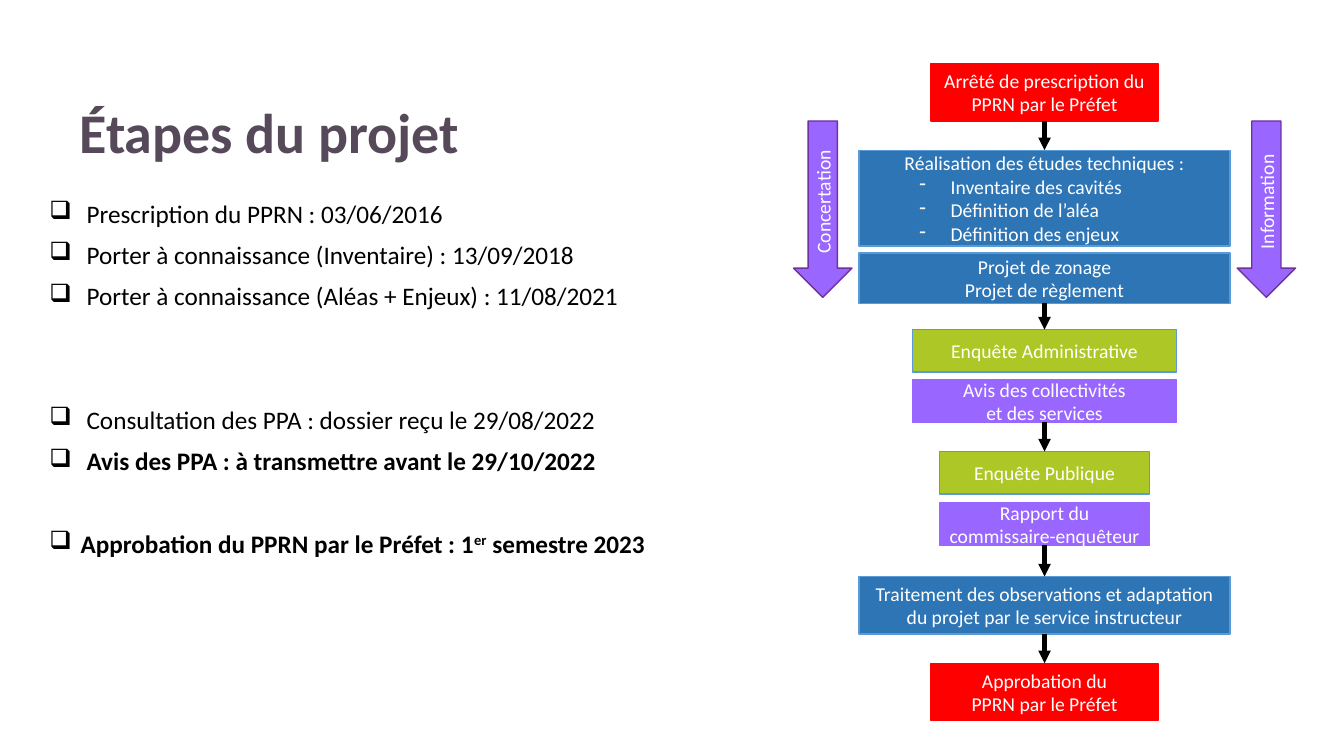
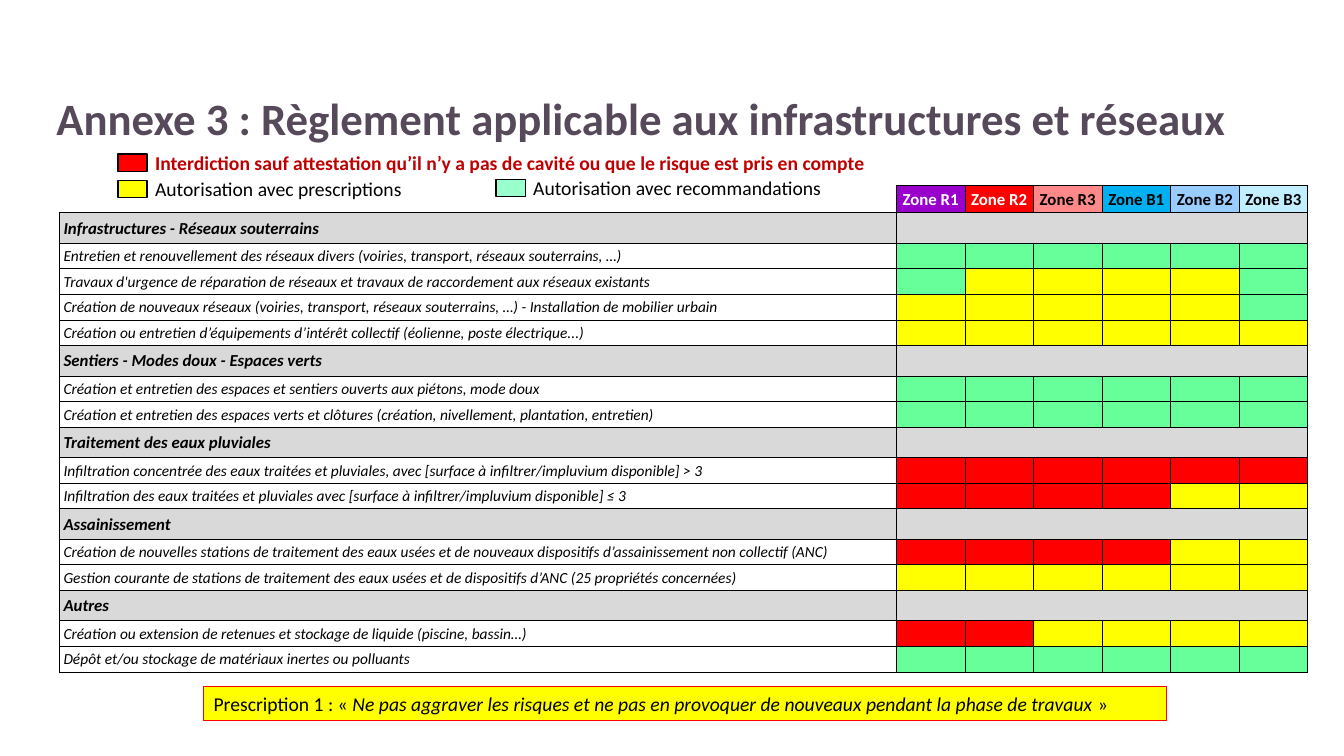
"""Build two slides on a risk-prevention plan: project steps and network rules."""
from dataclasses import dataclass
from typing import Any, NamedTuple, Optional

from lxml import etree
from pptx import Presentation
from pptx import util as u
from pptx.dml import color
from pptx.enum import shapes, text
from pptx.oxml import ns

ALIGN = text.PP_ALIGN
SHAPE = shapes.MSO_SHAPE


@dataclass(frozen=True)
class Theme:
    """Colours, font and type sizes shared by the slides."""
    font: str = "Calibri"
    title: str = "56495A"
    black: str = "000000"
    white: str = "FFFFFF"
    red: str = "FF0000"
    dark_red: str = "C00000"
    blue: str = "2E75B6"
    blue_line: str = "5B9BD5"
    lime: str = "ADC826"
    violet: str = "9966FF"
    violet_line: str = "7030A0"
    yellow: str = "FFFF00"
    mint: str = "99FFCC"
    green: str = "66FF99"
    grey: str = "D9D9D9"
    title_size: int = 40
    long_title_size: int = 32
    list_size: int = 18
    label_size: int = 14
    head_size: int = 12
    cell_size: int = 11


T = Theme()
NO_STYLE_TABLE = "{2D5ABB26-0587-4C30-8999-92F81FD0307C}"


class Run(NamedTuple):
    """A stretch of text with one style."""
    text: str
    bold: bool = False
    italic: bool = False
    superscript: bool = False


class Step(NamedTuple):
    """A bulleted project step."""
    runs: list[Run]
    before: float = 10
    indent: float = 0.37


class Box(NamedTuple):
    """A flowchart box centred on the chart axis."""
    top: float
    width: float
    height: float
    fill: str
    line: str
    lines: list[str]
    bullets: tuple[str, ...] = ()
    arrow_to_next: bool = False
    inset: float = 0.1


class SideArrow(NamedTuple):
    """A block arrow beside the flowchart."""
    left: float
    label: str


class Legend(NamedTuple):
    """A colour swatch and its meaning."""
    left: float
    top: float
    width: float
    fill: str
    ink: str
    label: Run


class Zone(NamedTuple):
    """A zone column heading."""
    name: str
    fill: str
    ink: str


class Rule(NamedTuple):
    """A table row; a row without levels is a section heading."""
    label: str
    levels: str = ""


STEPS = [
    Step([Run("Prescription du PPRN : 03/06/2016")], 0),
    Step([Run("Porter à connaissance (Inventaire) : 13/09/2018")]),
    Step([Run("Porter à connaissance (Aléas + Enjeux) : 11/08/2021")]),
    Step([Run("Consultation des PPA : dossier reçu le 29/08/2022")], 69),
    Step([Run("Avis des PPA : à transmettre avant le 29/10/2022", True)]),
    Step([Run("Approbation du PPRN par le Préfet : 1", True), Run("er", True, superscript=True),
          Run(" semestre 2023", True)], 39.5, 0.31),
]
AXIS = 10.36
BOXES = [
    Box(0.63, 2.25, 0.57, T.red, T.red, ["Arrêté de prescription du", "PPRN par le Préfet"],
        arrow_to_next=True),
    Box(1.49, 3.68, 0.95, T.blue, T.blue_line, ["Réalisation des études techniques :"],
        ("Inventaire des cavités", "Définition de l’aléa", "Définition des enjeux")),
    Box(2.51, 3.68, 0.5, T.blue, T.blue_line, ["Projet de zonage", "Projet de règlement"],
        arrow_to_next=True),
    Box(3.27, 2.62, 0.42, T.lime, T.blue_line, ["Enquête Administrative"]),
    Box(3.77, 2.62, 0.42, T.violet, T.violet, ["Avis des collectivités", "et des services"],
        arrow_to_next=True),
    Box(4.48, 2.08, 0.42, T.lime, T.blue_line, ["Enquête Publique"]),
    Box(4.99, 2.08, 0.42, T.violet, T.violet, ["Rapport du commissaire-enquêteur"],
        arrow_to_next=True, inset=0.05),
    Box(5.72, 3.68, 0.57, T.blue, T.blue_line,
        ["Traitement des observations et adaptation du projet par le service instructeur"],
        arrow_to_next=True),
    Box(6.58, 2.25, 0.57, T.red, T.red, ["Approbation du", "PPRN par le Préfet"]),
]
SIDE_ARROWS = [SideArrow(7.87, "Concertation"), SideArrow(12.27, "Information")]
LEGENDS = [
    Legend(1.17, 1.53, 7.35, T.red, T.dark_red, Run(
        "Interdiction sauf attestation qu’il n’y a pas de cavité ou que le risque est pris en compte",
        True)),
    Legend(1.17, 1.79, 3.07, T.yellow, T.black, Run("Autorisation avec prescriptions")),
    Legend(4.92, 1.78, 3.57, T.mint, T.black, Run("Autorisation avec recommandations")),
]
ZONES = [
    Zone("Zone R1", "9900CC", T.white), Zone("Zone R2", T.red, T.white),
    Zone("Zone R3", "FF8989", T.black), Zone("Zone B1", "00B0F0", T.black),
    Zone("Zone B2", "99CCFF", T.black), Zone("Zone B3", "C1EFFF", T.black),
]
LEVELS = {"G": T.green, "Y": T.yellow, "R": T.red}
RULES = [
    Rule("Infrastructures - Réseaux souterrains"),
    Rule("Entretien et renouvellement des réseaux divers (voiries, transport, réseaux souterrains, …)",
         "GGGGGG"),
    Rule("Travaux d'urgence de réparation de réseaux et travaux de raccordement aux réseaux existants",
         "GYYYYG"),
    Rule("Création de nouveaux réseaux (voiries, transport, réseaux souterrains, …)"
         " - Installation de mobilier urbain", "YYYYYG"),
    Rule("Création ou entretien d’équipements d’intérêt collectif (éolienne, poste électrique...)",
         "YYYYYY"),
    Rule("Sentiers - Modes doux - Espaces verts"),
    Rule("Création et entretien des espaces et sentiers ouverts aux piétons, mode doux", "GGGGGG"),
    Rule("Création et entretien des espaces verts et clôtures"
         " (création, nivellement, plantation, entretien)", "GGGGGG"),
    Rule("Traitement des eaux pluviales"),
    Rule("Infiltration concentrée des eaux traitées et pluviales, avec"
         " [surface à infiltrer/impluvium disponible] > 3", "RRRRRR"),
    Rule("Infiltration des eaux traitées et pluviales avec"
         " [surface à infiltrer/impluvium disponible] ≤ 3", "RRRRYY"),
    Rule("Assainissement"),
    Rule("Création de nouvelles stations de traitement des eaux usées et de nouveaux dispositifs"
         " d’assainissement non collectif (ANC)", "RRRRYY"),
    Rule("Gestion courante de stations de traitement des eaux usées et de dispositifs d’ANC"
         " (25 propriétés concernées)", "YYYYYY"),
    Rule("Autres"),
    Rule("Création ou extension de retenues et stockage de liquide (piscine, bassin…)", "RRYYYY"),
    Rule("Dépôt et/ou stockage de matériaux inertes ou polluants", "GGGGGG"),
]


def rgb(value: str) -> color.RGBColor:
    """Turn a hex string into a colour."""
    return color.RGBColor.from_string(value)


def sub(parent: Any, tag: str, **attrs: str) -> Any:
    """Append a DrawingML element."""
    return etree.SubElement(parent, ns.qn(tag), attrs)


def write(p: Any, runs: list[Run], size: float, ink: str, align: ALIGN = ALIGN.LEFT) -> None:
    """Add styled runs to a paragraph."""
    p.alignment = align
    for run in runs:
        r = p.add_run()
        r.text = run.text
        f = r.font
        f.name, f.size, f.bold, f.italic = T.font, u.Pt(size), run.bold, run.italic
        f.color.rgb = rgb(ink)
        if run.superscript:
            r._r.get_or_add_rPr().set("baseline", "30000")


def next_paragraph(tf: Any) -> Any:
    """Return the empty first paragraph, or a new one."""
    return tf.add_paragraph() if tf.paragraphs[0].runs else tf.paragraphs[0]


def bullet(p: Any, char: str, left: float, hang: float) -> None:
    """Give a paragraph a hanging bullet."""
    pPr = p._p.get_or_add_pPr()
    pPr.set("marL", str(u.Inches(left)))
    pPr.set("indent", str(-u.Inches(hang)))
    sub(pPr, "a:buChar", char=char)


def add_titled_slide(prs: Any, title: str, left: float, top: float, size: float) -> Any:
    """Add a title-only slide and format its title."""
    s = prs.slides.add_slide(prs.slide_layouts[5])
    sp = s.shapes.title
    sp.left, sp.top, sp.width, sp.height = map(u.Inches, (left, top, 11.95, 0.9))
    tf = sp.text_frame
    tf.auto_size, tf.vertical_anchor = text.MSO_AUTO_SIZE.NONE, text.MSO_ANCHOR.MIDDLE
    write(tf.paragraphs[0], [Run(title, True)], size, T.title, ALIGN.JUSTIFY)
    return s


def add_textbox(s: Any, left: float, top: float, width: float, height: float) -> Any:
    """Add a wrapping text box and return its frame."""
    tf = s.shapes.add_textbox(*map(u.Inches, (left, top, width, height))).text_frame
    tf.word_wrap = True
    return tf


def add_shape(s: Any, kind: SHAPE, at: tuple[float, ...], fill: str, line: str,
              weight: float = 1) -> Any:
    """Add a flat filled shape."""
    sp = s.shapes.add_shape(kind, *map(u.Inches, at))
    sp.shadow.inherit = False
    sp.fill.solid()
    sp.fill.fore_color.rgb = rgb(fill)
    sp.line.color.rgb = rgb(line)
    sp.line.width = u.Pt(weight)
    sp.text_frame.word_wrap = True
    return sp


def add_arrow(s: Any, start: Any, end: Any) -> None:
    """Join the bottom of one box to the top of another."""
    c = s.shapes.add_connector(shapes.MSO_CONNECTOR.STRAIGHT, 0, 0, 0, 0)
    c.begin_connect(start, 2)
    c.end_connect(end, 0)
    c.line.color.rgb = rgb(T.black)
    c.line.width = u.Pt(3)
    sub(c.line._get_or_add_ln(), "a:tailEnd", type="triangle")
    sub(c._element.spPr, "a:effectLst")


def add_box(s: Any, box: Box) -> Any:
    """Draw a flowchart box with its text."""
    at = (AXIS - box.width / 2, box.top, box.width, box.height)
    sp = add_shape(s, SHAPE.RECTANGLE, at, box.fill, box.line)
    tf = sp.text_frame
    tf.margin_left = tf.margin_right = u.Inches(box.inset)
    for line in box.lines:
        write(next_paragraph(tf), [Run(line)], T.label_size, T.white, ALIGN.CENTER)
    for item in box.bullets:
        p = next_paragraph(tf)
        p.level = 1
        bullet(p, "-", 0.81, 0.31)
        write(p, [Run(item)], T.label_size, T.white)
    return sp


def format_cell(cell: Any, fill: Optional[str], sides: str) -> None:
    """Set a cell's margins, fill and black borders on the given sides."""
    cell.margin_left = cell.margin_right = cell.margin_top = u.Inches(0.01)
    cell.margin_bottom = 0
    cell.vertical_anchor = text.MSO_ANCHOR.MIDDLE
    if fill:
        cell.fill.solid()
        cell.fill.fore_color.rgb = rgb(fill)
    else:
        cell.fill.background()
    tcPr = cell._tc.get_or_add_tcPr()
    for i, side in enumerate("LRTB"):
        ln = sub(tcPr, f"a:ln{side}", w=str(u.Pt(0.5)))
        if side in sides:
            sub(sub(ln, "a:solidFill"), "a:srgbClr", val=T.black)
        else:
            sub(ln, "a:noFill")
        tcPr.insert(i, ln)
    sub(cell.text_frame.paragraphs[0]._p, "a:endParaRPr", sz=str(T.cell_size * 100))


def add_rules_table(s: Any) -> None:
    """Draw the table of rules by zone."""
    height, head, section = 4.83, 0.27, 0.3
    sections = sum(not rule.levels for rule in RULES)
    item = (height - head - sections * section) / (len(RULES) - sections)
    table = s.shapes.add_table(len(RULES) + 1, len(ZONES) + 1,
                               *map(u.Inches, (0.59, 1.84, 12.39, height))).table
    table.first_row = table.horz_banding = False
    table._tbl.tblPr.find(ns.qn("a:tableStyleId")).text = NO_STYLE_TABLE
    for i, col in enumerate(table.columns):
        col.width = u.Inches(0.68 if i else 8.3)
    table.rows[0].height = u.Inches(head)
    format_cell(table.cell(0, 0), None, "RB")
    for c, zone in enumerate(ZONES, 1):
        cell = table.cell(0, c)
        write(cell.text_frame.paragraphs[0], [Run(zone.name, True)], T.head_size, zone.ink,
              ALIGN.CENTER)
        format_cell(cell, zone.fill, "LRTB")
    for r, rule in enumerate(RULES, 1):
        heading = not rule.levels
        table.rows[r].height = u.Inches(section if heading else item)
        label = table.cell(r, 0)
        write(label.text_frame.paragraphs[0], [Run(rule.label, heading, True)],
              T.head_size if heading else T.cell_size, T.black)
        format_cell(label, T.grey if heading else None, "LRTB")
        label.margin_left = u.Inches(0.04)
        for c in range(1, len(ZONES) + 1):
            edges = "TB" + "L" * (c == 1) + "R" * (c == len(ZONES))
            format_cell(table.cell(r, c), T.grey if heading else LEVELS[rule.levels[c - 1]],
                        edges if heading else "LRTB")


def build_steps(prs: Any) -> None:
    """Build the project steps slide."""
    s = add_titled_slide(prs, "Étapes du projet", 0.69, 0.85, T.title_size)
    tf = add_textbox(s, 0.39, 1.95, 6.21, 5.24)
    for step in STEPS:
        p = next_paragraph(tf)
        p.line_spacing, p.space_before = 0.9, u.Pt(step.before)
        bullet(p, "❑", step.indent, step.indent)
        write(p, step.runs, T.list_size, T.black, ALIGN.JUSTIFY)
    drawn = [add_box(s, box) for box in BOXES]
    for arrow in SIDE_ARROWS:
        sp = add_shape(s, SHAPE.DOWN_ARROW, (arrow.left, 1.2, 0.58, 1.75), T.violet, T.violet_line)
        sp.text_frame._txBody.bodyPr.set("vert", "vert270")
        write(sp.text_frame.paragraphs[0], [Run(arrow.label)], T.label_size, T.white, ALIGN.CENTER)
    for box, start, end in zip(BOXES, drawn, drawn[1:]):
        if box.arrow_to_next:
            add_arrow(s, start, end)


def build_rules(prs: Any) -> None:
    """Build the network rules slide."""
    s = add_titled_slide(prs, "Annexe 3 : Règlement applicable aux infrastructures et réseaux",
                         0.46, 0.72, T.long_title_size)
    for key in LEGENDS:
        add_shape(s, SHAPE.RECTANGLE, (key.left, key.top, 0.29, 0.17), key.fill, T.black)
        tf = add_textbox(s, key.left + 0.27, key.top - 0.08, key.width, 0.34)
        write(tf.paragraphs[0], [key.label], T.label_size, key.ink)
    add_rules_table(s)
    sp = add_shape(s, SHAPE.RECTANGLE, (2.02, 6.81, 9.55, 0.34), T.yellow, T.red, 0.75)
    write(sp.text_frame.paragraphs[0], [
        Run("Prescription 1 : « "),
        Run("Ne pas aggraver les risques et ne pas en provoquer de nouveaux"
            " pendant la phase de travaux ", italic=True),
        Run("»")], T.label_size, T.black)


def main() -> None:
    """Build and save the presentation."""
    prs = Presentation()
    prs.slide_width, prs.slide_height = u.Inches(13.33), u.Inches(7.5)
    build_steps(prs)
    build_rules(prs)
    prs.save("out.pptx")


if __name__ == "__main__":
    main()
